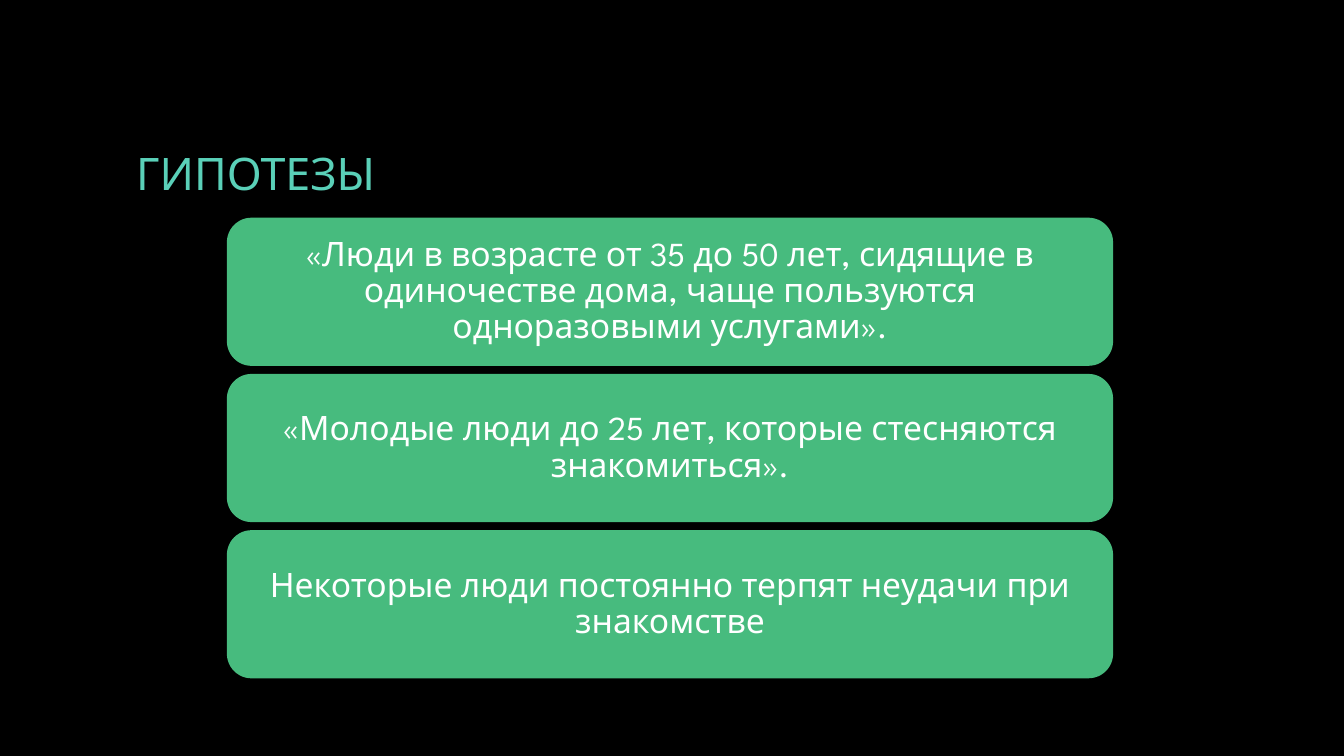
"""Builds the slide of hypotheses: a title above three stacked cards."""
from dataclasses import dataclass

from pptx import Presentation
from pptx import util as u
from pptx.dml.color import RGBColor
from pptx.enum import shapes, text


@dataclass(frozen=True)
class Theme:
    font: str = "League Spartan"
    background: str = "000000"
    title_color: str = "5AD0B8"
    card_fill: str = "47BB7E"
    card_text: str = "FFFFFF"
    title_size: int = 32
    card_size: int = 24


class SlideBuilder:
    def __init__(self, deck, theme):
        self.theme = theme
        self.page = deck.slides.add_slide(deck.slide_layouts[5])
        fill = self.page.background.fill
        fill.solid()
        fill.fore_color.rgb = RGBColor.from_string(theme.background)

    def set_text(self, box, words, size, color, align):
        frame = box.text_frame
        frame.word_wrap = True
        frame.auto_size = text.MSO_AUTO_SIZE.NONE
        frame.vertical_anchor = text.MSO_ANCHOR.MIDDLE
        para = frame.paragraphs[0]
        para.text = words
        para.alignment = align
        para.font.name = self.theme.font
        para.font.size = u.Pt(size)
        para.font.color.rgb = RGBColor.from_string(color)
        return para

    def title(self, words, left, top, width, height):
        box = self.page.shapes.title
        box.left, box.top = u.Inches(left), u.Inches(top)
        box.width, box.height = u.Inches(width), u.Inches(height)
        self.set_text(box, words, self.theme.title_size,
                      self.theme.title_color, text.PP_ALIGN.LEFT)

    def card(self, words, left, top, width, height):
        box = self.page.shapes.add_shape(
            shapes.MSO_SHAPE.ROUNDED_RECTANGLE,
            u.Inches(left), u.Inches(top), u.Inches(width), u.Inches(height))
        box.shadow.inherit = False
        box.fill.solid()
        box.fill.fore_color.rgb = RGBColor.from_string(self.theme.card_fill)
        box.line.fill.background()
        frame = box.text_frame
        frame.margin_left = frame.margin_right = u.Inches(0.1)
        frame.margin_top = frame.margin_bottom = u.Inches(0.1)
        para = self.set_text(box, words, self.theme.card_size,
                             self.theme.card_text, text.PP_ALIGN.CENTER)
        para.line_spacing = 0.9


HYPOTHESES = (
    "«Люди в возрасте от 35 до 50 лет, сидящие в одиночестве дома, "
    "чаще пользуются одноразовыми услугами».",
    "«Молодые люди до 25 лет, которые стесняются знакомиться».",
    "Некоторые люди постоянно терпят неудачи при знакомстве",
)


def main():
    deck = Presentation()
    deck.slide_width, deck.slide_height = u.Inches(13.33), u.Inches(7.5)
    builder = SlideBuilder(deck, Theme())
    builder.title("ГИПОТЕЗЫ", 1.25, 0.67, 10.83, 2.08)
    first_top, pitch = 2.16, 1.55
    for row, hypothesis in enumerate(HYPOTHESES):
        builder.card(hypothesis, 2.25, first_top + row * pitch, 8.79, 1.47)
    deck.save("out.pptx")


if __name__ == "__main__":
    main()
